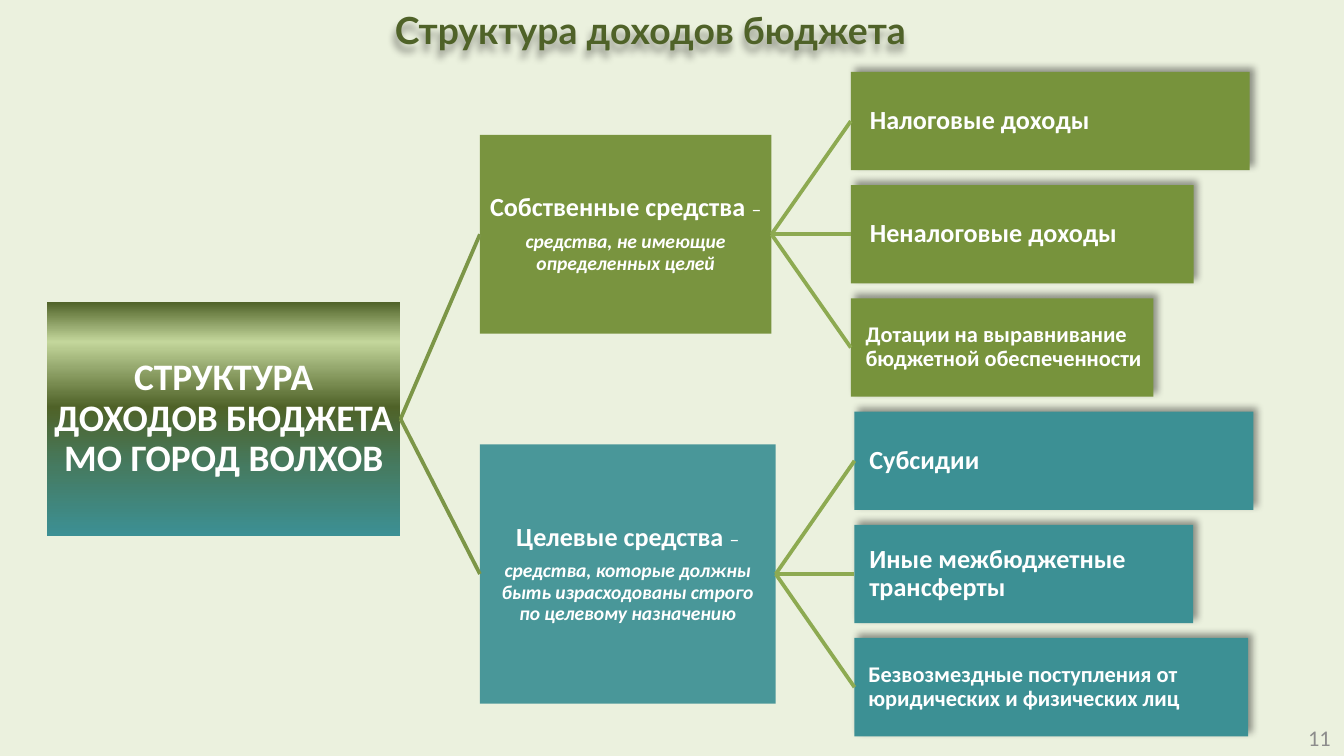
from lxml import etree
from pptx import Presentation
from pptx import util as u
from pptx.dml import color
from pptx.enum import shapes, text
from pptx.oxml import ns

Cm, Pt = u.Cm, u.Pt
GREEN, TEAL, DARK, WHITE = "77933C", "3C9094", "4F6228", "FFFFFF"
ROOT_LINE, LEAF_LINE = "7C9647", "8DAA51"
ROOT_STOPS = [(0, DARK), (17, "C3D69B"), (45, DARK), (71, "457B62"), (100, TEAL)]
LEAF_TOP, LEAF_PITCH, LEAF_HEIGHT = 1.36, 2.14, 1.86

BRANCHES = [
    dict(name="Собственные средства ", notes=["средства, не имеющие определенных целей"],
         width=5.51, height=3.76, fill=GREEN, alpha=98, leaf_left=16.08,
         leaves=[("Налоговые доходы", 7.54, 14, 0.33),
                 ("Неналоговые доходы", 6.48, 14, 0.33),
                 ("Дотации на выравнивание бюджетной обеспеченности", 5.72, 12, 0.25)]),
    dict(name="Целевые средства ",
         notes=["средства, которые должны быть израсходованы строго", "по целевому назначению"],
         width=5.59, height=4.9, fill=TEAL, alpha=92, leaf_left=16.15,
         leaves=[("Субсидии", 7.54, 14, 0.25),
                 ("Иные межбюджетные трансферты", 6.4, 14, 0.25),
                 ("Безвозмездные поступления от юридических и физических лиц", 7.44, 12, 0.23)]),
]


def rgb(value):
    return color.RGBColor.from_string(value)


def add(parent, tag, **attrs):
    return etree.SubElement(parent, ns.qn(tag), {k: str(v) for k, v in attrs.items()})


class Deck:
    font = "Calibri"

    def __init__(self, width, height, background):
        self.prs = Presentation()
        self.prs.slide_width, self.prs.slide_height = Cm(width), Cm(height)
        self.s = self.prs.slides.add_slide(self.prs.slide_layouts[5])
        self.s.background.fill.solid()
        self.s.background.fill.fore_color.rgb = rgb(background)

    def style(self, p, size, hue=WHITE, bold=True, italic=None, font=None):
        p.font.name, p.font.size = font or self.font, Pt(size)
        p.font.bold, p.font.italic = bold, italic
        p.font.color.rgb = rgb(hue)

    def shadow(self, sp, blur, dist, angle):
        sp.shadow.inherit = False
        effects = sp._element.spPr.find(ns.qn("a:effectLst"))
        outer = add(effects, "a:outerShdw", blurRad=Pt(blur), dist=Pt(dist),
                    dir=angle * 60000, algn="tl", rotWithShape=0)
        add(add(outer, "a:srgbClr", val="000000"), "a:alpha", val=40000)

    def title(self, words, left, top, width, height):
        sp = self.s.shapes.title
        sp.left, sp.top, sp.width, sp.height = Cm(left), Cm(top), Cm(width), Cm(height)
        sp.text_frame.vertical_anchor = text.MSO_ANCHOR.TOP
        sp.text_frame.text = words
        p = sp.text_frame.paragraphs[0]
        p.alignment = text.PP_ALIGN.CENTER
        self.style(p, 20, DARK, font="Lato")
        self.shadow(sp, 4, 4, 110)

    def number(self, words, left, top, width, height):
        sp = self.s.shapes.add_textbox(Cm(left), Cm(top), Cm(width), Cm(height))
        tf = sp.text_frame
        tf.word_wrap = True
        tf.vertical_anchor = text.MSO_ANCHOR.MIDDLE
        p = tf.paragraphs[0]
        p.text = words
        p.alignment = text.PP_ALIGN.RIGHT
        self.style(p, 12, "8C8C8C", bold=False)

    def box(self, left, middle, width, height, fill=None, alpha=100, stops=None):
        sp = self.s.shapes.add_shape(shapes.MSO_SHAPE.RECTANGLE, Cm(left),
                                     Cm(middle - height / 2), Cm(width), Cm(height))
        if stops:
            sp.fill.gradient()
            sp.fill.gradient_angle = 270
            stop_list = sp._element.spPr.find(".//" + ns.qn("a:gsLst"))
            for old in list(stop_list):
                stop_list.remove(old)
            for pos, hue in stops:
                add(add(stop_list, "a:gs", pos=pos * 1000), "a:srgbClr", val=hue)
        else:
            sp.fill.solid()
            sp.fill.fore_color.rgb = rgb(fill)
            if alpha < 100:
                hue = sp._element.spPr.find(".//" + ns.qn("a:srgbClr"))
                add(hue, "a:alpha", val=alpha * 1000)
        sp.line.fill.background()
        sp.shadow.inherit = False
        tf = sp.text_frame
        tf.word_wrap = True
        tf.vertical_anchor = text.MSO_ANCHOR.MIDDLE
        tf.margin_left = tf.margin_right = tf.margin_top = tf.margin_bottom = Cm(0.03)
        return sp

    def paragraph(self, sp, words, size, italic=None, centred=True):
        tf = sp.text_frame
        p = tf.paragraphs[0] if not tf.text else tf.add_paragraph()
        p.alignment = text.PP_ALIGN.CENTER if centred else text.PP_ALIGN.LEFT
        p.line_spacing = 0.9
        p.add_run().text = words
        self.style(p, size, italic=italic)
        return p

    def root(self, left, middle, width, height, lines):
        sp = self.box(left, middle, width, height, stops=ROOT_STOPS)
        for words in lines:
            self.paragraph(sp, words, 20)
        return sp

    def branch(self, left, middle, spec):
        sp = self.box(left, middle, spec["width"], spec["height"], spec["fill"], spec["alpha"])
        p = self.paragraph(sp, spec["name"], 14)
        p.space_after = Pt(5)
        r = p.add_run()
        r.text = "–"
        r.font.size, r.font.bold = Pt(10.5), False
        for words in spec["notes"]:
            self.paragraph(sp, words, 10.5, italic=True)
        return sp

    def leaf(self, left, middle, width, fill, words, size, indent):
        sp = self.box(left, middle, width, LEAF_HEIGHT, fill)
        self.shadow(sp, 4, 3, 315)
        p = self.paragraph(sp, words, size, centred=False)
        p._p.get_or_add_pPr().set("marL", str(Cm(indent)))
        return sp

    def link(self, start, end, hue):
        line = self.s.shapes.add_connector(shapes.MSO_CONNECTOR.STRAIGHT, 0, 0, 0, 0)
        line.begin_connect(start, 3)
        line.end_connect(end, 1)
        line.line.color.rgb = rgb(hue)
        line.line.width = Pt(2)
        add(line._element.spPr, "a:effectLst")


def main():
    deck = Deck(25.4, 14.29, "EBF1DE")
    deck.title("Структура доходов бюджета", 1.5, 0, 21.59, 1.57)
    root = deck.root(0.89, 7.92, 6.68, 4.43, ["СТРУКТУРА ДОХОДОВ БЮДЖЕТА", "МО ГОРОД ВОЛХОВ"])
    first_middle = LEAF_TOP + LEAF_HEIGHT / 2
    for b, spec in enumerate(BRANCHES):
        middles = [first_middle + LEAF_PITCH * (3 * b + i) for i in range(3)]
        branch = deck.branch(9.07, middles[1], spec)
        deck.link(root, branch, ROOT_LINE)
        for middle, (words, width, size, indent) in zip(middles, spec["leaves"]):
            leaf = deck.leaf(spec["leaf_left"], middle, width, spec["fill"], words, size, indent)
            deck.link(branch, leaf, LEAF_LINE)
    deck.number("11", 19.48, 13.56, 5.92, 0.76)
    deck.prs.save("out.pptx")


if __name__ == "__main__":
    main()
